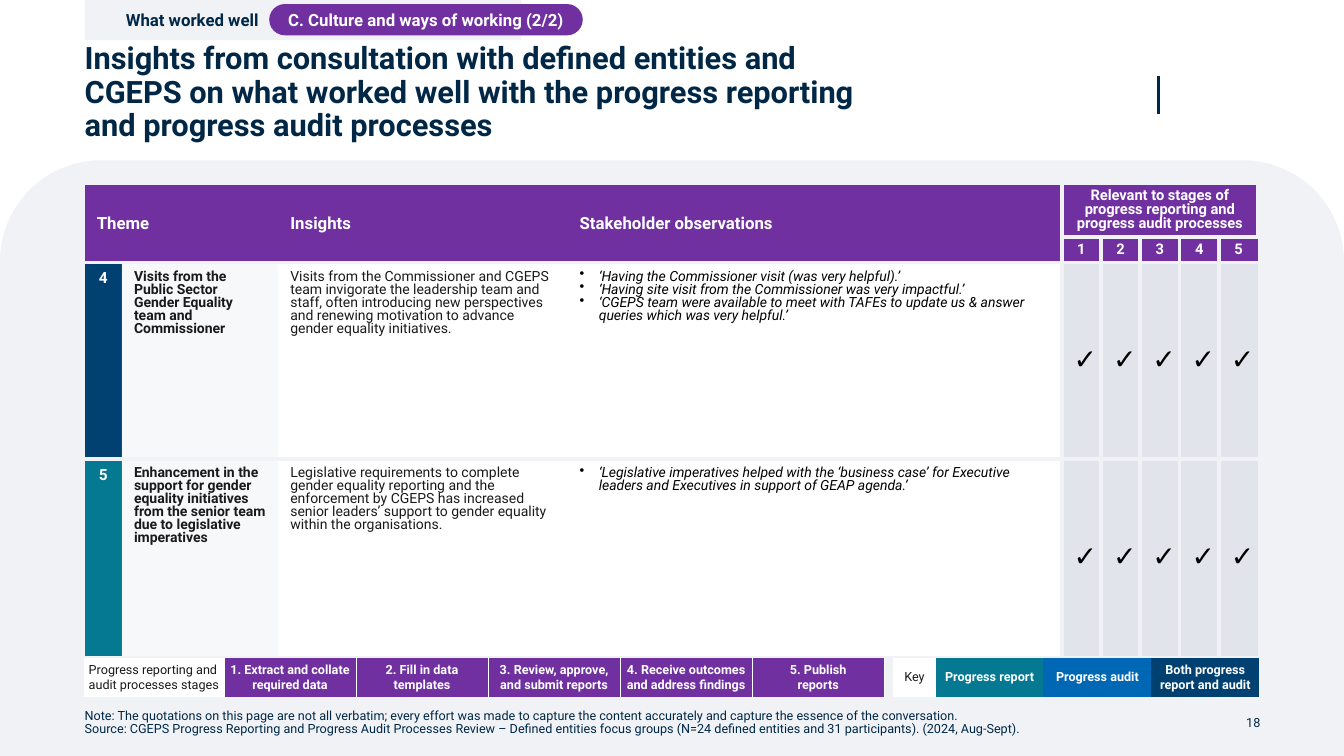
"""Build the slide on what worked well in culture and ways of working."""
import lxml.etree
import pptx
import pptx.dml.color
import pptx.enum.shapes
import pptx.enum.text
import pptx.oxml.ns
import pptx.util

Inches = pptx.util.Inches
Pt = pptx.util.Pt
Shape = pptx.enum.shapes.MSO_SHAPE
Align = pptx.enum.text.PP_ALIGN
Anchor = pptx.enum.text.MSO_ANCHOR
qn = pptx.oxml.ns.qn

COLORS = {
    "white": "FFFFFF", "pale": "F0F2F5", "grey": "E1E5EB", "black": "000000",
    "ink": "1A1A1A", "navy": "002846", "blue": "004172", "azure": "0067B4",
    "teal": "057992", "purple": "7030A0",
}
LEFT = 0.84
STAGES = range(5)
FIRST_STAGE = 4
THEMES = [
    ("4", "blue", "Visits from the Public Sector Gender Equality team and Commissioner",
     "Visits from the Commissioner and CGEPS team invigorate the leadership team and staff, "
     "often introducing new perspectives and renewing motivation to advance gender equality "
     "initiatives.",
     ["‘Having the Commissioner visit (was very helpful).’",
      "‘Having site visit from the Commissioner was very impactful.’",
      "‘CGEPS team were available to meet with TAFEs to update us & answer queries which was "
      "very helpful.’"]),
    ("5", "teal", "Enhancement in the support for gender equality initiatives from the senior "
     "team due to legislative imperatives",
     "Legislative requirements to complete gender equality reporting and the enforcement by "
     "CGEPS has increased senior leaders’ support to gender equality within the organisations.",
     ["‘Legislative imperatives helped with the ‘business case’ for Executive leaders and "
      "Executives in support of GEAP agenda.’"]),
]
STEPS = [["1. Extract and collate required data"], ["2. Fill in data", "templates"],
         ["3. Review, approve, and submit reports"],
         ["4. Receive outcomes and address findings"], ["5. Publish\nreports"]]
KEYS = [("Progress report", "teal"), ("Progress audit", "azure"),
        ("Both progress report and audit", "blue")]


class Painter:
    """Hold the style and the current slide."""

    def __init__(self, page, font):
        self.page = page
        self.font = font

    def color(self, name):
        return pptx.dml.color.RGBColor.from_string(COLORS[name])

    def paint(self, target, name):
        target.fill.solid()
        target.fill.fore_color.rgb = self.color(name)

    def add_lines(self, frame, lines, size, color, bold=False, italic=False, align=Align.LEFT,
                  spacing=1.0, indent=0, bullet=False):
        frame.word_wrap = True
        for index, line in enumerate(lines):
            para = frame.add_paragraph() if index else frame.paragraphs[0]
            para.alignment = align
            para.line_spacing = spacing
            if indent:
                props = para._p.get_or_add_pPr()
                props.set("marL", str(Inches(indent)))
                props.set("indent", str(-Inches(indent) if bullet else 0))
                if bullet:
                    lxml.etree.SubElement(props, qn("a:buChar")).set("char", "•")
            for part_index, part in enumerate(line.split("\n")):
                if part_index:
                    para.add_line_break()
                span = para.add_run()
                span.text = part
                span.font.name = self.font
                span.font.size = Pt(size)
                span.font.bold = bold
                span.font.italic = italic
                span.font.color.rgb = self.color(color)

    def shape(self, kind, left, top, width, height, fill, adjustments=()):
        box = self.page.shapes.add_shape(
            kind, Inches(left), Inches(top), Inches(width), Inches(height))
        box.shadow.inherit = False
        self.paint(box, fill)
        box.line.fill.background()
        for index, value in enumerate(adjustments):
            box.adjustments[index] = value
        box.text_frame.vertical_anchor = Anchor.MIDDLE
        return box.text_frame

    def text(self, left, top, width, height, lines, size, **style):
        box = self.page.shapes.add_textbox(
            Inches(left), Inches(top), Inches(width), Inches(height))
        frame = box.text_frame
        frame.vertical_anchor = Anchor.MIDDLE
        frame.margin_left = frame.margin_right = frame.margin_top = frame.margin_bottom = 0
        self.add_lines(frame, lines, size, "navy", **style)

    def line(self, left, top, right, bottom, color, width):
        rule = self.page.shapes.add_connector(
            pptx.enum.shapes.MSO_CONNECTOR.STRAIGHT,
            Inches(left), Inches(top), Inches(right), Inches(bottom))
        rule.line.color.rgb = self.color(color)
        rule.line.width = Pt(width)
        lxml.etree.SubElement(rule._element.spPr, qn("a:effectLst"))

    def table(self, left, top, widths, heights):
        frame = self.page.shapes.add_table(
            len(heights), len(widths), Inches(left), Inches(top),
            Inches(sum(widths)), Inches(sum(heights)))
        grid = frame.table
        grid.first_row = grid.horz_banding = False
        for column, width in zip(grid.columns, widths):
            column.width = Inches(width)
        for row, height in zip(grid.rows, heights):
            row.height = Inches(height)
        return grid

    def cell(self, cell, lines, size, color, fill, inset, anchor=Anchor.MIDDLE, alpha=None,
             **style):
        cell.margin_left = cell.margin_right = Inches(inset[0])
        cell.margin_top = cell.margin_bottom = Inches(inset[1])
        cell.vertical_anchor = anchor
        self.paint(cell, fill)
        if alpha:
            tone = cell._tc.tcPr.find(".//" + qn("a:srgbClr"))
            lxml.etree.SubElement(tone, qn("a:alpha")).set("val", str(alpha * 1000))
        self.add_lines(cell.text_frame, lines, size, color, **style)

    def borders(self, cell, sides, color, width):
        props = cell._tc.get_or_add_tcPr()
        for index, side in enumerate("LRTB"):
            edge = lxml.etree.Element(qn("a:ln" + side))
            if side in sides:
                edge.set("w", str(Pt(width)))
                solid = lxml.etree.SubElement(edge, qn("a:solidFill"))
                lxml.etree.SubElement(solid, qn("a:srgbClr")).set("val", COLORS[color])
            else:
                lxml.etree.SubElement(edge, qn("a:noFill"))
            props.insert(index, edge)


def add_themes(painter):
    grid = painter.table(LEFT, 1.84, [0.37, 1.55, 2.87, 4.9] + [0.39] * 5,
                         [0.51, 0.24, 1.95, 1.95])
    grid.cell(0, 0).merge(grid.cell(1, 1))
    grid.cell(0, 2).merge(grid.cell(1, 2))
    grid.cell(0, 3).merge(grid.cell(1, 3))
    grid.cell(0, FIRST_STAGE).merge(grid.cell(0, 8))
    head = {"color": "white", "fill": "purple", "inset": (0.12, 0.04), "bold": True}
    for column, title in ((0, "Theme"), (2, "Insights"), (3, "Stakeholder observations")):
        painter.cell(grid.cell(0, column), [title], 12, spacing=0.9, **head)
    painter.cell(grid.cell(0, FIRST_STAGE),
                 ["Relevant to stages of progress reporting and progress audit processes"],
                 10.5, align=Align.CENTER, spacing=Pt(10), **head)
    for stage in STAGES:
        painter.cell(grid.cell(1, FIRST_STAGE + stage), [str(stage + 1)], 10.5,
                     align=Align.CENTER, spacing=0.9, **head)
    inset = (0.12, 0.08)
    body = {"inset": inset, "anchor": Anchor.TOP, "spacing": 0.8}
    for row, (number, fill, theme, insight, quotes) in enumerate(THEMES, 2):
        painter.cell(grid.cell(row, 0), [number], 11, "white", fill, inset, Anchor.TOP,
                     bold=True, align=Align.CENTER, spacing=0.9)
        painter.cell(grid.cell(row, 1), [theme], 10, "ink", "white", alpha=50, bold=True, **body)
        painter.cell(grid.cell(row, 2), [insight], 10, "ink", "white", **body)
        painter.cell(grid.cell(row, 3), quotes, 10, "black", "white", italic=True,
                     indent=0.19, bullet=True, **body)
        for stage in STAGES:
            painter.cell(grid.cell(row, FIRST_STAGE + stage), ["✓"], 20, "black", "grey", inset,
                         italic=True, align=Align.CENTER, spacing=0.9)
    for row in range(4):
        for column in range(9):
            cell = grid.cell(row, column)
            sides = ("L" * (column >= FIRST_STAGE) + "R" * (3 <= column < 8)
                     + "T" * (row > 0) + "B" * (row < 3))
            painter.borders(cell, "" if cell.is_spanned else sides, "pale", 3)


def add_legends(painter):
    inset = (0.04, 0.04)
    label = {"size": 9, "color": "white", "inset": inset, "bold": True, "align": Align.CENTER}
    key = painter.table(8.86, 6.53, [0.42] + [1.07] * 3, [0.38])
    painter.cell(key.cell(0, 0), ["Key"], 9, "ink", "white", inset, align=Align.CENTER)
    for column, (name, fill) in enumerate(KEYS, 1):
        painter.cell(key.cell(0, column), [name], fill=fill, **label)
    for cell in key.iter_cells():
        painter.borders(cell, "", "white", 0.5)
    steps = painter.table(LEFT, 6.53, [1.38] + [1.31] * 5, [0.38])
    painter.cell(steps.cell(0, 0), ["Progress reporting and audit processes stages"], 9, "ink",
                 "white", inset)
    for column, lines in enumerate(STEPS, 1):
        painter.cell(steps.cell(0, column), lines, fill="purple", **label)
    for cell in steps.iter_cells():
        painter.borders(cell, "LR", "white", 0.5)


def main():
    deck = pptx.Presentation()
    deck.slide_width, deck.slide_height = Inches(13.33), Inches(7.5)
    painter = Painter(deck.slides.add_slide(deck.slide_layouts[6]), "Roboto")
    painter.shape(Shape.ROUND_2_SAME_RECTANGLE, 0, 1.59, 13.33, 5.91, "pale", (0.17, 0))
    painter.line(11.49, 0.75, 11.49, 1.13, "navy", 1.5)
    add_themes(painter)
    painter.text(LEFT, 0.49, 7.87, 0.87, [
        "Insights from consultation with defined entities and CGEPS on what worked well with "
        "the progress reporting and progress audit processes"], 22, bold=True, spacing=0.9)
    painter.text(LEFT, 7.03, 10.63, 0.28, [
        "Note: The quotations on this page are not all verbatim; every effort was made to "
        "capture the content accurately and capture the essence of the conversation.\n"
        "Source: CGEPS Progress Reporting and Progress Audit Processes Review – Defined entities "
        "focus groups (N=24 defined entities and 31 participants). (2024, Aug-Sept)."],
        9, spacing=0.9)
    tab = painter.shape(Shape.RECTANGLE, LEFT, 0, 4.33, 0.4, "pale")
    painter.add_lines(tab, ["What worked well"], 12, "navy", bold=True, indent=0.31)
    pill = painter.shape(Shape.ROUNDED_RECTANGLE, 2.67, 0.04, 3.11, 0.31, "purple", (0.5,))
    painter.add_lines(pill, ["C. Culture and ways of working (2/2)"], 12, "white", bold=True,
                      align=Align.CENTER)
    add_legends(painter)
    painter.text(11.71, 7.03, 0.79, 0.28, ["18"], 9, align=Align.RIGHT)
    deck.save("out.pptx")


if __name__ == "__main__":
    main()
